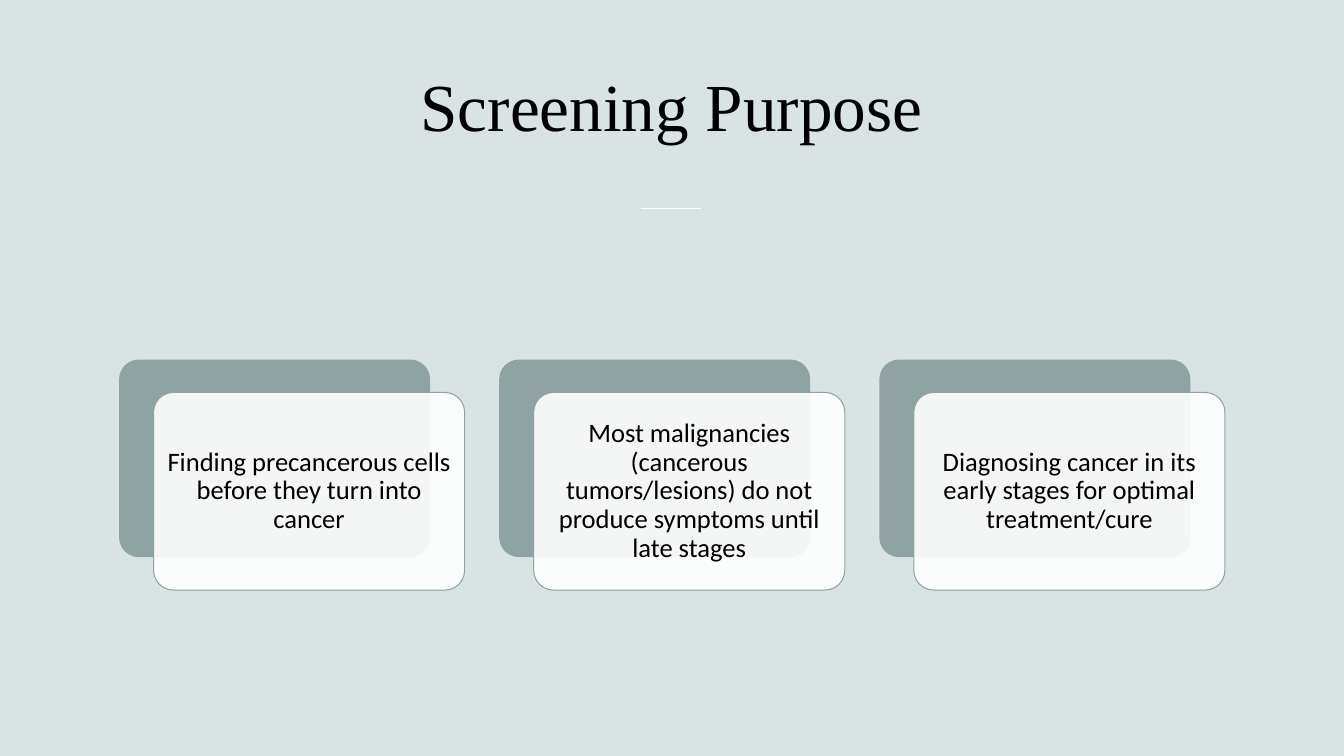
from lxml import etree
from pptx import Presentation
from pptx import util as u
from pptx.dml.color import RGBColor
from pptx.enum import shapes, text
from pptx.oxml.ns import qn

TITLE = "Screening Purpose"
PURPOSES = [
    "Finding precancerous cells before they turn into cancer",
    "Most malignancies (cancerous tumors/lesions) do not produce symptoms until late stages",
    "Diagnosing cancer in its early stages for optimal treatment/cure",
]
COLORS = {"background": "DAE3E3", "sage": "8FA3A3", "white": "FFFFFF", "black": "000000"}

SLIDE_WIDTH, SLIDE_HEIGHT = 33.87, 19.05
CARD_WIDTH, CARD_HEIGHT = 7.84, 4.98
CARD_LEFT, CARD_TOP, CARD_PITCH = 3.0, 9.06, 9.58
FRONT_SHIFT_X, FRONT_SHIFT_Y = 0.87, 0.83
RULE_LEFT, RULE_WIDTH, RULE_TOP = 16.16, 1.5, 5.25


def color(name):
    return RGBColor.from_string(COLORS[name])


def write(shape, words, font_name, size):
    frame = shape.text_frame
    frame.word_wrap = True
    frame.vertical_anchor = text.MSO_ANCHOR.MIDDLE
    paragraph = frame.paragraphs[0]
    paragraph.text = words
    paragraph.alignment = text.PP_ALIGN.CENTER
    paragraph.font.name = font_name
    paragraph.font.size = u.Pt(size)
    paragraph.font.color.rgb = color("black")
    return frame


def add_card(slide, left, top, fill):
    shape = slide.shapes.add_shape(
        shapes.MSO_SHAPE.ROUNDED_RECTANGLE,
        u.Cm(left), u.Cm(top), u.Cm(CARD_WIDTH), u.Cm(CARD_HEIGHT))
    shape.adjustments[0] = 0.1
    shape.shadow.inherit = False
    shape.fill.solid()
    shape.fill.fore_color.rgb = color(fill)
    return shape


def add_purpose(slide, left, words):
    back = add_card(slide, left, CARD_TOP, "sage")
    back.line.fill.background()
    front = add_card(slide, left + FRONT_SHIFT_X, CARD_TOP + FRONT_SHIFT_Y, "white")
    front.line.color.rgb = color("sage")
    front.line.width = u.Pt(0.75)
    fill_color = front.fill._xPr.find(qn("a:solidFill"))[0]
    etree.SubElement(fill_color, qn("a:alpha"), val="90000")
    frame = write(front, words, "Calibri", 19)
    frame.margin_left = frame.margin_right = u.Cm(0.2)
    frame.margin_top = frame.margin_bottom = u.Cm(0.2)
    frame.paragraphs[0].line_spacing = 0.9


def main():
    presentation = Presentation()
    presentation.slide_width = u.Cm(SLIDE_WIDTH)
    presentation.slide_height = u.Cm(SLIDE_HEIGHT)
    slide = presentation.slides.add_slide(presentation.slide_layouts[6])
    slide.background.fill.solid()
    slide.background.fill.fore_color.rgb = color("background")

    title = slide.shapes.add_textbox(u.Cm(2.74), u.Cm(0.71), u.Cm(28.37), u.Cm(3.86))
    write(title, TITLE, "Times New Roman", 48)

    rule = slide.shapes.add_connector(
        shapes.MSO_CONNECTOR.STRAIGHT,
        u.Cm(RULE_LEFT), u.Cm(RULE_TOP), u.Cm(RULE_LEFT + RULE_WIDTH), u.Cm(RULE_TOP))
    rule.line.color.rgb = color("white")
    rule.line.width = u.Pt(1)
    etree.SubElement(rule._element.spPr, qn("a:effectLst"))

    for index, words in enumerate(PURPOSES):
        add_purpose(slide, CARD_LEFT + index * CARD_PITCH, words)

    presentation.save("out.pptx")


if __name__ == "__main__":
    main()
